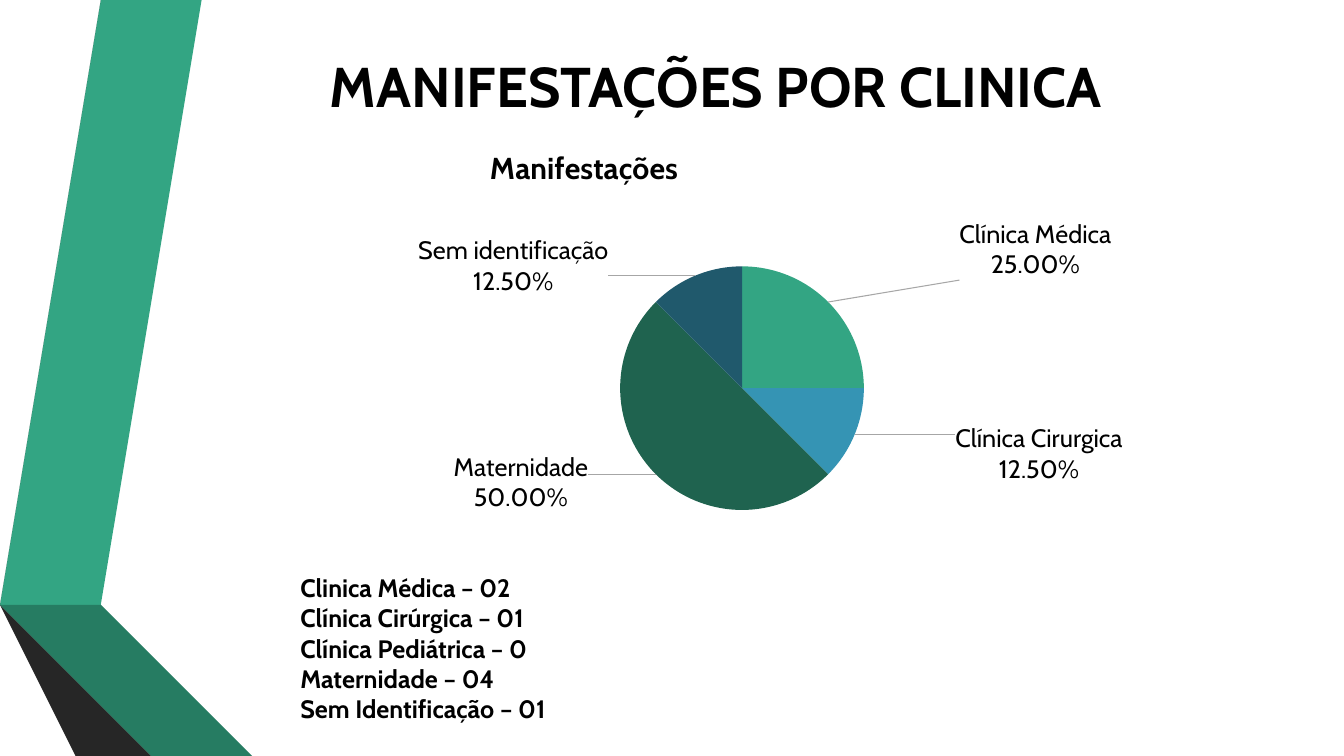
import pptx
import pptx.chart.data
import pptx.dml.color
import pptx.enum.chart
import pptx.enum.text
import pptx.oxml
import pptx.oxml.ns
import pptx.util

Inches = pptx.util.Inches
FONT = "Cabin"
BLACK = "000000"
TITLE = "MANIFESTAÇÕES POR CLINICA"
CHART_TITLE = "Manifestações"
CHART_BOX = (2.22, 1.22, 10.51, 4.4)
PIE_BOX = (6.15, 2.64, 2.42, 2.42)
CHART_TITLE_AT = (4.81, 1.4)

CLINICS = [
    ("Clínica Médica", 25, "33A583", (0.12, -0.04)),
    ("Clínica Cirurgica", 12.5, "3594B4", (0.09, -0.03)),
    ("Clinica Pediátrica", 0, "D35731", None),
    ("Maternidade", 50, "1F634F", (-0.06, -0.06)),
    ("Sem identificação", 12.5, "20596C", (-0.08, 0.06)),
]
COUNTS = [
    "Clinica Médica – 02",
    "Clínica Cirúrgica – 01",
    "Clínica Pediátrica – 0",
    "Maternidade – 04",
    "Sem Identificação – 01",
]
RIBBONS = [
    ("33A583", [(0.5, 5.78), (0.77, 5.83), (1.73, 0), (1.45, 0)]),
    ("595959", [(1.39, 0), (1.11, 0), (0.16, 5.73), (0.44, 5.77)]),
    ("262626", [(0.16, 5.73), (1.45, 7.5), (1.51, 7.5)]),
    ("1A5242", [(0.5, 5.79), (2.08, 7.5), (2.14, 7.5)]),
    ("267C62", [(0.5, 5.79), (2.14, 7.5), (2.83, 7.5), (0.77, 5.83), (0.5, 5.78)]),
    ("404040", [(2.02, 7.5), (0.48, 5.83), (0.43, 5.78), (0.44, 5.77),
                (0.16, 5.73), (1.51, 7.5)]),
]


def color(value):
    return pptx.dml.color.RGBColor.from_string(value)


def style_font(font, size, bold):
    font.name = FONT
    font.size = pptx.util.Pt(size)
    font.bold = bold
    font.color.rgb = color(BLACK)


def add_ribbon(slide, fill, points):
    builder = slide.shapes.build_freeform(*points[0], scale=Inches(1))
    builder.add_line_segments(points[1:], close=True)
    shape = builder.convert_to_shape()
    shape.shadow.inherit = False
    shape.fill.solid()
    shape.fill.fore_color.rgb = color(fill)
    shape.line.fill.background()


def add_text(slide, box, lines, size, alignment, anchor):
    frame = slide.shapes.add_textbox(*map(Inches, box)).text_frame
    frame.word_wrap = True
    frame.vertical_anchor = anchor
    for index, line in enumerate(lines):
        paragraph = frame.add_paragraph() if index else frame.paragraphs[0]
        paragraph.alignment = alignment
        run = paragraph.add_run()
        run.text = line
        style_font(run.font, size, True)


def layout_xml(inner="", **values):
    fields = "".join(f'<c:{name} val="{value:.3f}"/>' for name, value in values.items())
    return f"<c:layout><c:manualLayout>{inner}{fields}</c:manualLayout></c:layout>"


def chart_element(xml):
    tag = xml[1:].split(">", 1)
    return pptx.oxml.parse_xml(f'<{tag[0]} {pptx.oxml.ns.nsdecls("c", "a")}>{tag[1]}')


def chart_fraction(x, y):
    left, top, width, height = CHART_BOX
    return (x - left) / width, (y - top) / height


def labels_xml():
    number_format = '<c:numFmt formatCode="0.00%" sourceLinked="0"/>'
    text = (f'<c:txPr><a:bodyPr/><a:p><a:pPr><a:defRPr sz="1800" b="0"><a:solidFill>'
            f'<a:srgbClr val="{BLACK}"/></a:solidFill><a:latin typeface="{FONT}"/>'
            '</a:defRPr></a:pPr></a:p></c:txPr>')
    shown = {"LegendKey": 0, "Val": 0, "CatName": 1, "SerName": 0,
             "Percent": 1, "BubbleSize": 0}
    flags = "".join(f'<c:show{name} val="{value}"/>' for name, value in shown.items())
    common = (number_format + text + '<c:dLblPos val="outEnd"/>' + flags
              + "<c:separator>\n</c:separator>")
    labels = ""
    for index, (_, _, _, offset) in enumerate(CLINICS):
        body = layout_xml(x=offset[0], y=offset[1]) + common if offset else '<c:delete val="1"/>'
        labels += f'<c:dLbl><c:idx val="{index}"/>{body}</c:dLbl>'
    leader = ('<c:showLeaderLines val="1"/><c:leaderLines><c:spPr><a:ln w="9525"><a:solidFill>'
              '<a:srgbClr val="A6A6A6"/></a:solidFill></a:ln></c:spPr></c:leaderLines>')
    return f"<c:dLbls>{labels}{common}{leader}</c:dLbls>"


def add_pie(slide):
    data = pptx.chart.data.CategoryChartData()
    data.categories = [clinic[0] for clinic in CLINICS]
    data.add_series(CHART_TITLE, [clinic[1] for clinic in CLINICS])
    chart = slide.shapes.add_chart(
        pptx.enum.chart.XL_CHART_TYPE.PIE, *map(Inches, CHART_BOX), data).chart
    style_font(chart.font, 18, False)
    chart.has_legend = False
    chart.has_title = True
    run = chart.chart_title.text_frame.paragraphs[0].add_run()
    run.text = CHART_TITLE
    style_font(run.font, 21.6, True)

    plot = chart.plots[0]
    plot.vary_by_categories = True
    series = plot.series[0]
    for index, clinic in enumerate(CLINICS):
        fill = series.points[index].format.fill
        fill.solid()
        fill.fore_color.rgb = color(clinic[2])
    series._element.find(pptx.oxml.ns.qn("c:cat")).addprevious(chart_element(labels_xml()))

    edges = '<c:xMode val="edge"/><c:yMode val="edge"/>'
    pie_x, pie_y = chart_fraction(*PIE_BOX[:2])
    title_x, title_y = chart_fraction(*CHART_TITLE_AT)
    pie_layout = layout_xml('<c:layoutTarget val="inner"/>' + edges, x=pie_x, y=pie_y,
                            w=PIE_BOX[2] / CHART_BOX[2], h=PIE_BOX[3] / CHART_BOX[3])
    title_layout = layout_xml(edges, x=title_x, y=title_y)
    plot_area = plot._element.getparent()
    title = chart.chart_title._element
    for parent, position, xml in ((plot_area, 0, pie_layout), (title, 1, title_layout)):
        for old in parent.findall(pptx.oxml.ns.qn("c:layout")):
            parent.remove(old)
        parent.insert(position, chart_element(xml))


def main():
    presentation = pptx.Presentation()
    presentation.slide_width = Inches(13.33)
    presentation.slide_height = Inches(7.5)
    slide = presentation.slides.add_slide(presentation.slide_layouts[6])
    for fill, points in RIBBONS:
        add_ribbon(slide, fill, points)
    align = pptx.enum.text.PP_ALIGN
    anchor = pptx.enum.text.MSO_ANCHOR
    add_text(slide, (1.62, 0.27, 10.96, 1.15), [TITLE], 40, align.CENTER, anchor.MIDDLE)
    add_pie(slide)
    add_text(slide, (2.88, 5.63, 8.44, 1.6), COUNTS, 18, align.LEFT, anchor.TOP)
    presentation.save("out.pptx")


if __name__ == "__main__":
    main()
